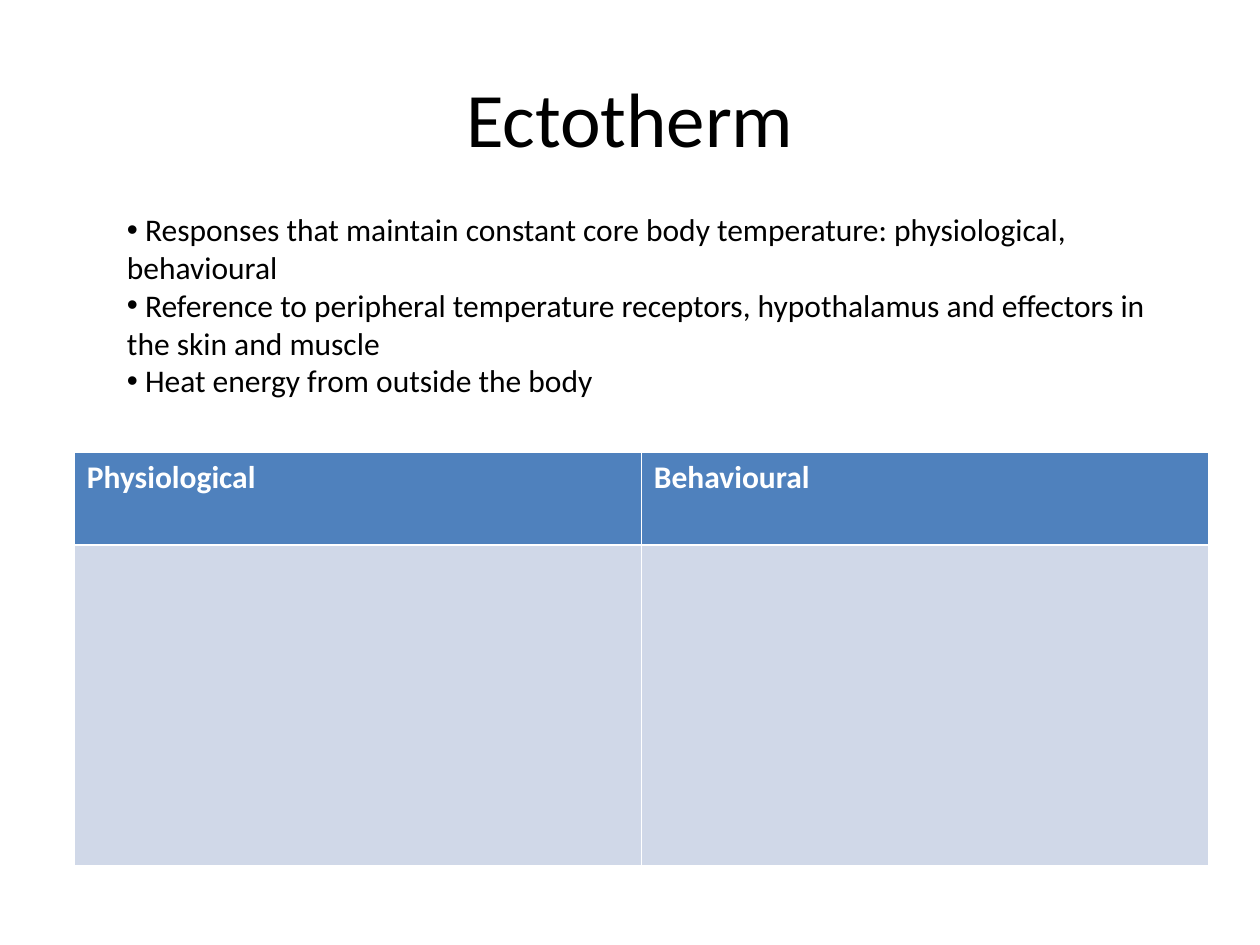
from lxml.etree import SubElement
from pptx import Presentation
from pptx.dml.color import RGBColor
from pptx.enum.text import MSO_ANCHOR as Anchor, MSO_AUTO_SIZE as Fit, PP_ALIGN as Align
from pptx.oxml.ns import qn
from pptx.util import Pt

FONT = "Calibri"
COLORS = {"text": "000000", "light": "FFFFFF", "head": "4F81BD", "body": "D0D8E8"}
POINTS = [
    "Responses that maintain constant core body temperature: physiological, behavioural",
    "Reference to peripheral temperature receptors, hypothalamus and effectors in the skin and muscle",
    "Heat energy from outside the body",
]
HEADS = ["Physiological", "Behavioural"]


def color(name):
    return RGBColor.from_string(COLORS[name])


def add_run(para, text, size, tone="text", bold=False):
    run = para.add_run()
    run.text = text
    font = run.font
    font.name, font.size, font.bold = FONT, Pt(size), bold
    font.color.rgb = color(tone)


def add_title(slide, text):
    title = slide.shapes.title
    title.left, title.top, title.width, title.height = Pt(36), Pt(21.6), Pt(648), Pt(90)
    title.text_frame.vertical_anchor = Anchor.MIDDLE
    para = title.text_frame.paragraphs[0]
    para.alignment = Align.CENTER
    add_run(para, text, 44)


def add_bullet(para):
    props = para._p.get_or_add_pPr()
    SubElement(props, qn("a:buFont"), typeface="Arial")
    SubElement(props, qn("a:buChar"), char="•")


def add_list(slide, points):
    box = slide.shapes.add_textbox(Pt(65.5), Pt(116.6), Pt(601), Pt(116.6))
    frame = box.text_frame
    frame.word_wrap = True
    frame.auto_size = Fit.SHAPE_TO_FIT_TEXT
    for i, point in enumerate(points):
        para = frame.add_paragraph() if i else frame.paragraphs[0]
        add_bullet(para)
        add_run(para, " " + point, 18)


def add_grid(slide, heads):
    """Add a header row over one tall empty row; the table style draws the white borders."""
    shape = slide.shapes.add_table(2, len(heads), Pt(42.5), Pt(258.5), Pt(648), Pt(236))
    table = shape.table
    for row, height, tone in zip(table.rows, (53, 183), ("head", "body")):
        row.height = Pt(height)
        for cell in row.cells:
            cell.fill.solid()
            cell.fill.fore_color.rgb = color(tone)
    for cell, head in zip(table.rows[0].cells, heads):
        add_run(cell.text_frame.paragraphs[0], head, 18, "light", True)


def main():
    deck = Presentation()
    deck.slide_width, deck.slide_height = Pt(720), Pt(540)
    slide = deck.slides.add_slide(deck.slide_layouts[5])
    add_title(slide, "Ectotherm")
    add_grid(slide, HEADS)
    add_list(slide, POINTS)
    deck.save("out.pptx")


if __name__ == "__main__":
    main()
